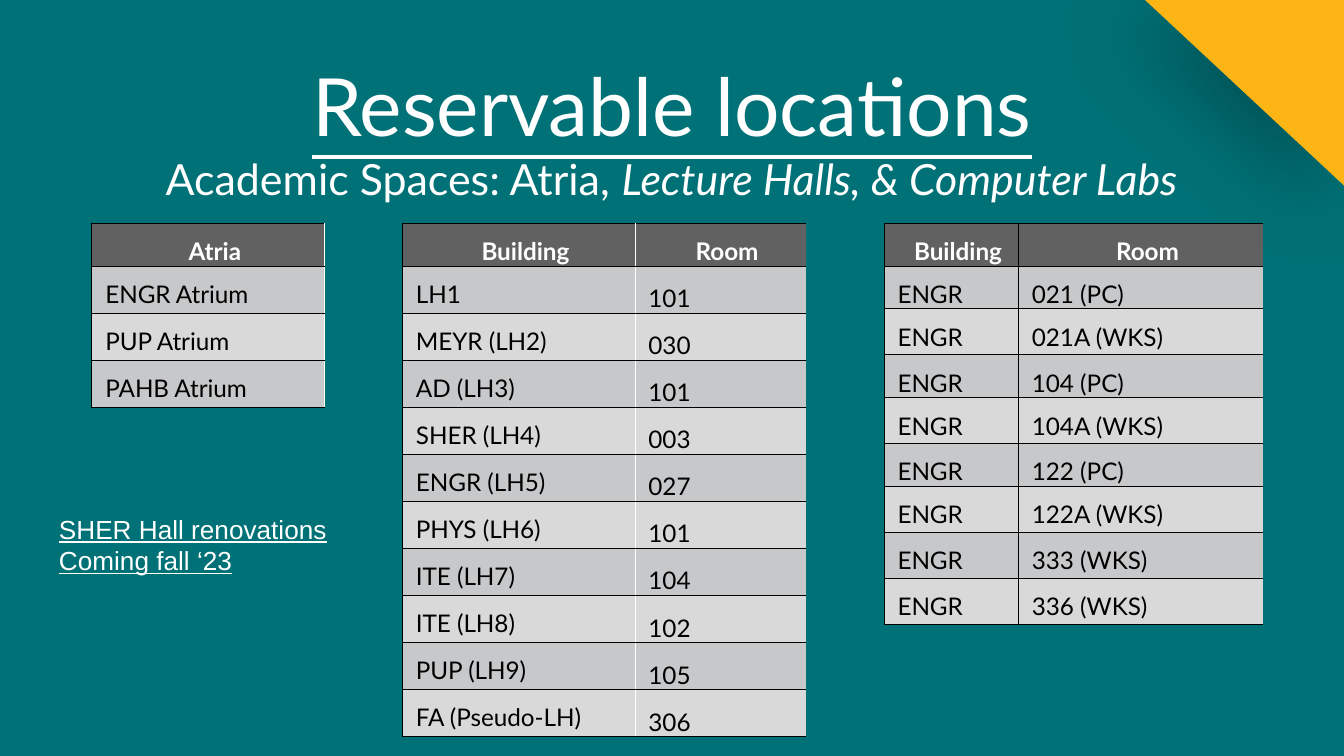
import pptx
import pptx.dml.color
import pptx.enum.shapes
import pptx.enum.text
import pptx.oxml
import pptx.oxml.ns
import pptx.util

Pt = pptx.util.Pt
ALIGN = pptx.enum.text.PP_ALIGN
DRAWING = pptx.oxml.ns.nsdecls("a")

TEAL, GOLD = "007176", "FDB515"
WHITE, BLACK = "FFFFFF", "000000"
HEADER, DARK_BAND, LIGHT_BAND = "616161", "C7C8CA", "D9D9D9"

ATRIA = [["Atria"], ["ENGR Atrium"], ["PUP Atrium"], ["PAHB Atrium"]]
LECTURE_HALLS = [
    ["Building", "Room"],
    ["LH1", "101"],
    ["MEYR (LH2)", "030"],
    ["AD (LH3)", "101"],
    ["SHER (LH4)", "003"],
    ["ENGR (LH5)", "027"],
    ["PHYS (LH6)", "101"],
    ["ITE (LH7)", "104"],
    ["ITE (LH8)", "102"],
    ["PUP (LH9)", "105"],
    ["FA (Pseudo-LH)", "306"],
]
LAB_ROOMS = ["021 (PC)", "021A (WKS)", "104 (PC)", "104A (WKS)",
             "122 (PC)", "122A (WKS)", "333 (WKS)", "336 (WKS)"]
LABS = [["Building", "Room"]] + [["ENGR", room] for room in LAB_ROOMS]


def color(value):
    return pptx.dml.color.RGBColor.from_string(value)


def style(para, size, value, name="Lato"):
    para.font.size = Pt(size)
    para.font.name = name
    para.font.color.rgb = color(value)


def add_border(cell, side, value):
    """Draw one cell edge, or leave it clear when value is None."""
    if value:
        paint = f'<a:solidFill><a:srgbClr val="{value}"/></a:solidFill>'
    else:
        paint = "<a:noFill/>"
    line = f'<a:ln{side} {DRAWING} w="{Pt(0.5)}">{paint}</a:ln{side}>'
    cell._tc.get_or_add_tcPr().append(pptx.oxml.parse_xml(line))


def add_heading(page, left, top, width, height):
    box = page.shapes.add_textbox(Pt(left), Pt(top), Pt(width), Pt(height))
    frame = box.text_frame
    frame.word_wrap = True
    frame.margin_top = frame.margin_bottom = Pt(7.2)

    title = frame.paragraphs[0]
    title.text = "Reservable locations"
    title.font.underline = True
    style(title, 43, WHITE)

    subtitle = frame.add_paragraph()
    subtitle.add_run().text = "Academic Spaces: Atria, "
    span = subtitle.add_run()
    span.text = "Lecture Halls, & Computer Labs"
    span.font.italic = True
    style(subtitle, 23, WHITE)

    for para in frame.paragraphs:
        para.alignment = ALIGN.CENTER


def add_room_table(page, left, top, widths, heights, rows, divider, right_edge,
                   room_spacing=None):
    """Place a banded table; divider and right_edge colour its upright lines."""
    box = page.shapes.add_table(len(rows), len(widths), Pt(left), Pt(top),
                                Pt(sum(widths)), Pt(sum(heights)))
    table = box.table
    for column, width in zip(table.columns, widths):
        column.width = Pt(width)
    last = len(widths) - 1

    for r, (texts, height) in enumerate(zip(rows, heights)):
        table.rows[r].height = Pt(height)
        band = HEADER if r == 0 else DARK_BAND if r % 2 else LIGHT_BAND
        for c, text in enumerate(texts):
            cell = table.cell(r, c)
            cell.margin_left = cell.margin_top = Pt(7.2)
            cell.margin_right = cell.margin_bottom = 0

            # Edges
            add_border(cell, "L", divider if c else BLACK)
            add_border(cell, "R", right_edge if c == last else divider)
            add_border(cell, "T", BLACK)
            add_border(cell, "B", BLACK)
            cell.fill.solid()
            cell.fill.fore_color.rgb = color(band)

            # Text
            para = cell.text_frame.paragraphs[0]
            para.text = text
            para.font.bold = r == 0
            style(para, 13, BLACK if r else WHITE)
            para.alignment = ALIGN.LEFT if r else ALIGN.CENTER
            if r and c and room_spacing:
                para.line_spacing = room_spacing


def add_corner(page, left, top, width, height):
    kind = pptx.enum.shapes.MSO_SHAPE.RIGHT_TRIANGLE
    corner = page.shapes.add_shape(kind, Pt(left), Pt(top), Pt(width), Pt(height))
    corner.fill.solid()
    corner.fill.fore_color.rgb = color(GOLD)
    corner.line.fill.background()
    corner.rotation = 270
    properties = corner._element.spPr
    properties.find(pptx.oxml.ns.qn("a:xfrm")).set("flipH", "1")
    # Soft shadow towards the lower left
    properties.append(pptx.oxml.parse_xml(
        f'<a:effectLst {DRAWING}><a:outerShdw blurRad="{Pt(45)}" dist="{Pt(15)}" '
        f'dir="{141 * 60000}" algn="bl" rotWithShape="0"><a:srgbClr val="{BLACK}">'
        '<a:alpha val="28000"/></a:srgbClr></a:outerShdw></a:effectLst>'))


def add_note(page, left, top, width, height):
    box = page.shapes.add_textbox(Pt(left), Pt(top), Pt(width), Pt(height))
    frame = box.text_frame
    frame.word_wrap = False
    frame.auto_size = pptx.enum.text.MSO_AUTO_SIZE.SHAPE_TO_FIT_TEXT
    frame.text = "SHER Hall renovations\nComing fall ‘23"
    for para in frame.paragraphs:
        style(para, 14, WHITE, "Arial")
        para.font.underline = True


def main():
    deck = pptx.Presentation()
    deck.slide_width, deck.slide_height = Pt(720), Pt(405)
    page = deck.slides.add_slide(deck.slide_layouts[6])
    page.background.fill.solid()
    page.background.fill.fore_color.rgb = color(TEAL)

    add_heading(page, 24.5, 23, 671, 45.4)

    # Lecture halls, computer labs and atria share one top edge
    table_top, header, row = 119.5, 23, 25.2
    add_room_table(page, 215.6, table_top, [124.6, 91.4], [header] + [row] * 10,
                   LECTURE_HALLS, WHITE, None, room_spacing=1.15)
    lab_heights = [header] + [header, 24.6] * 3 + [24.6] * 2
    add_room_table(page, 473.6, table_top, [72, 131], lab_heights,
                   LABS, BLACK, None)
    add_corner(page, 617, -3.6, 99.4, 106.6)
    add_room_table(page, 49.2, table_top, [124.6], [header] + [row] * 3,
                   ATRIA, WHITE, WHITE)

    add_note(page, 24.5, 271.4, 159, 41)
    deck.save("out.pptx")


if __name__ == "__main__":
    main()
